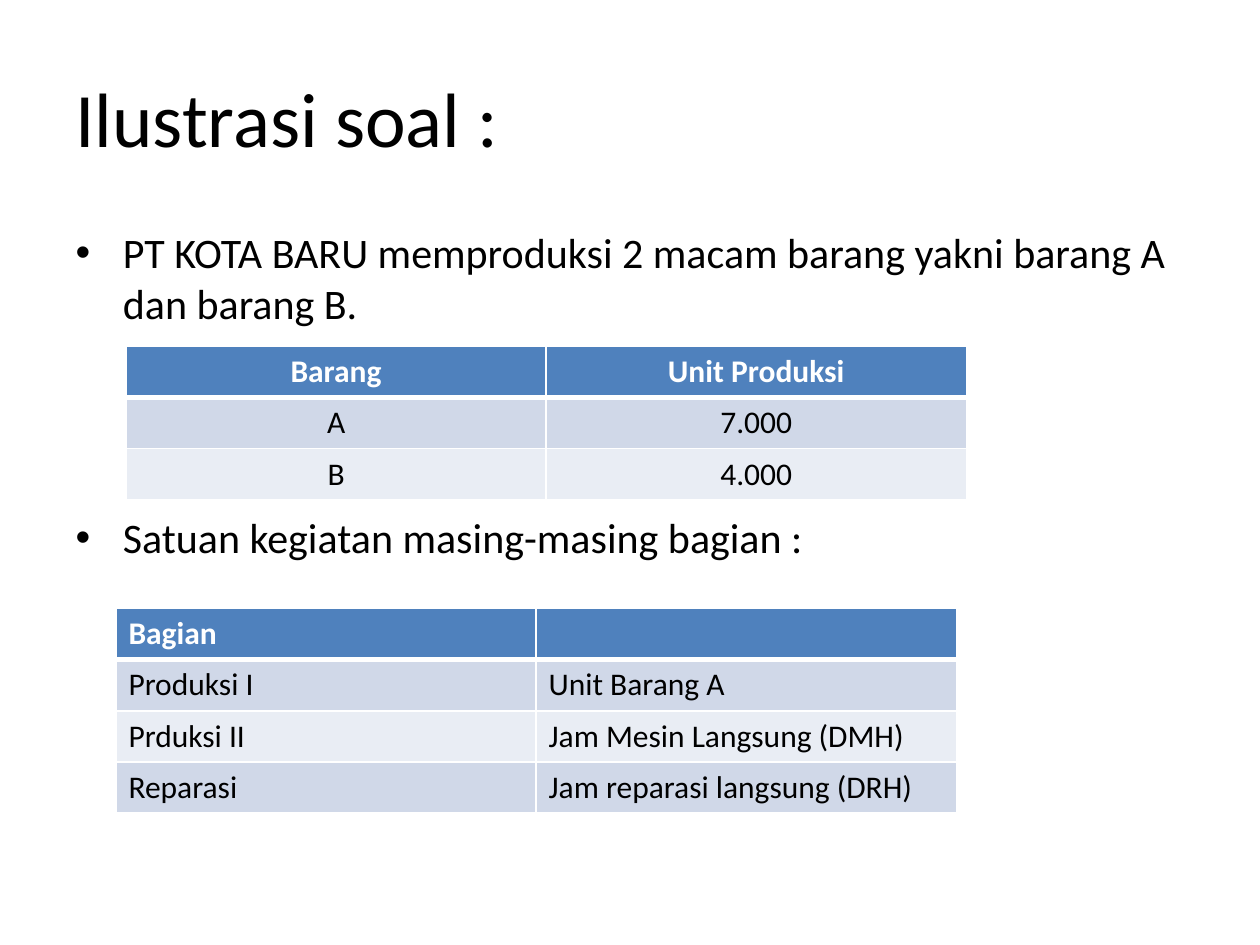
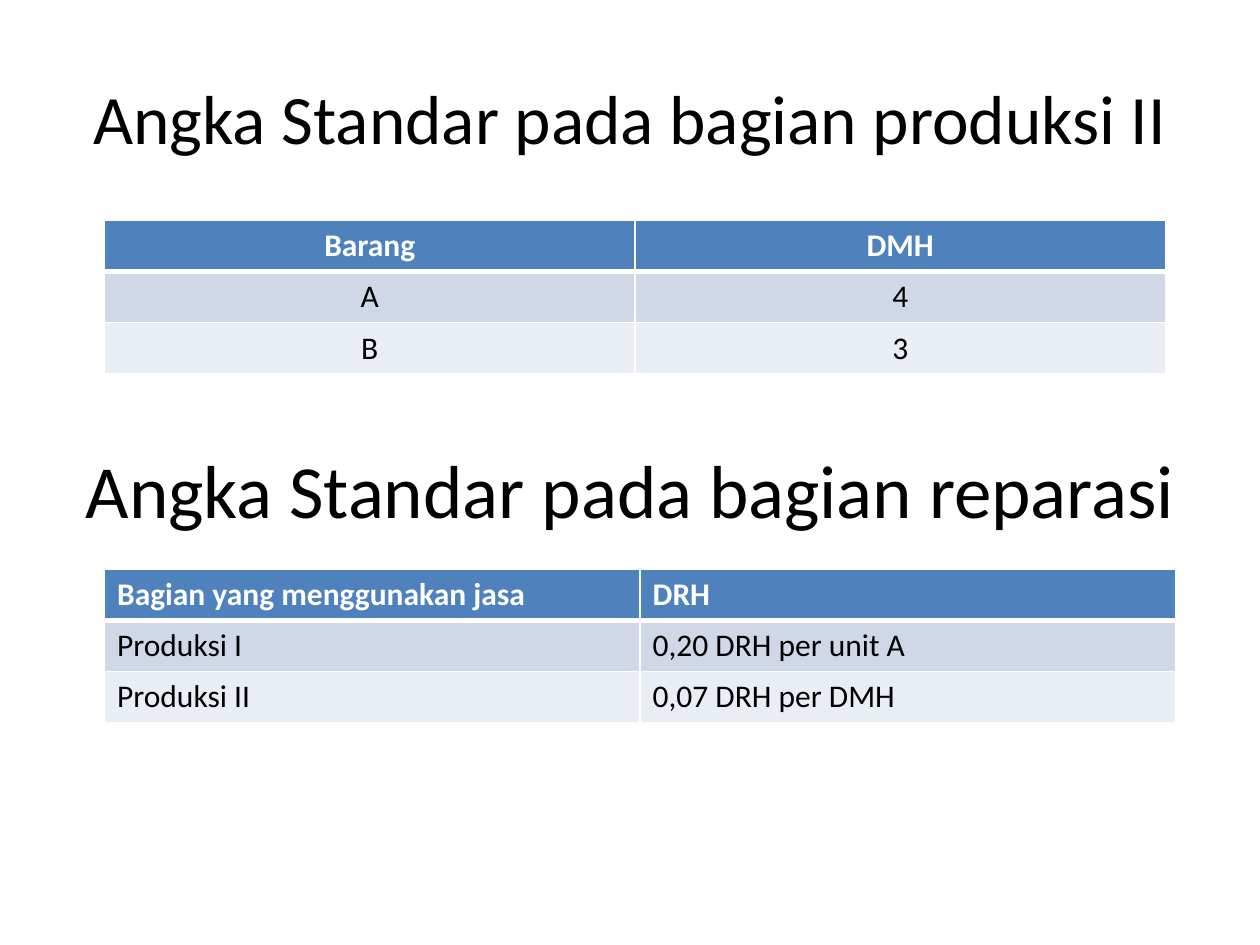
from pptx import Presentation
from pptx.dml.color import RGBColor
from pptx.enum.text import MSO_ANCHOR, MSO_AUTO_SIZE, PP_ALIGN
from pptx.util import Inches, Pt
from lxml.etree import SubElement
from pptx.oxml.ns import qn

FONT = "Calibri"
COLOURS = {"text": "000000", "white": "FFFFFF", "head": "4F81BD",
           "odd": "D0D8E8", "even": "E9EDF4"}
ROW = 0.405


def write(frame, text, size, align=PP_ALIGN.LEFT, colour="text", bold=False):
    """Add one run to the last paragraph of a text frame."""
    par = frame.paragraphs[-1]
    par.alignment = align
    run = par.add_run()
    run.text = text
    run.font.name = FONT
    run.font.size = Pt(size)
    run.font.bold = bold
    run.font.color.rgb = RGBColor.from_string(COLOURS[colour])


def draw_table(slide, left, top, width, rows, align):
    """Draw a banded table with a header row and white rules."""
    frame = slide.shapes.add_table(len(rows), len(rows[0]), Inches(left), Inches(top),
                                   Inches(width), Inches(ROW * len(rows)))
    for i, row in enumerate(rows):
        fill = "head" if i == 0 else "odd" if i % 2 else "even"
        for j, text in enumerate(row):
            cell = frame.table.cell(i, j)
            props = cell._tc.get_or_add_tcPr()
            for side in ("lnL", "lnR", "lnT", "lnB"):
                thick = (i, side) in ((0, "lnB"), (1, "lnT"))
                line = SubElement(props, qn(f"a:{side}"), w=str(Pt(3 if thick else 1)))
                SubElement(SubElement(line, qn("a:solidFill")), qn("a:srgbClr"),
                           val=COLOURS["white"])
            cell.fill.solid()
            cell.fill.fore_color.rgb = RGBColor.from_string(COLOURS[fill])
            if text:
                write(cell.text_frame, text, 18, align,
                      "white" if i == 0 else "text", i == 0)


deck = Presentation()
deck.slide_width, deck.slide_height = Inches(10), Inches(7.5)

# Both slides share the title's place
slides = []
for layout, text, size, align in (
        (1, "Ilustrasi soal :", 44, PP_ALIGN.LEFT),
        (5, "Angka Standar pada bagian produksi II", 39.6, PP_ALIGN.CENTER)):
    slide = deck.slides.add_slide(deck.slide_layouts[layout])
    title = slide.shapes.title
    title.left, title.top = Inches(0.5), Inches(0.3)
    title.width, title.height = Inches(9), Inches(1.25)
    title.text_frame.auto_size = MSO_AUTO_SIZE.NONE
    write(title.text_frame, text, size, align)
    slides.append(slide)
goods, rates = slides

# Slide 1: products and units of activity
body = goods.placeholders[1]
body.left, body.top = Inches(0.5), Inches(1.75)
body.width, body.height = Inches(9), Inches(4.95)
frame = body.text_frame
frame.auto_size = MSO_AUTO_SIZE.NONE
write(frame, "PT KOTA BARU memproduksi 2 macam barang yakni barang A dan barang B.", 24)
frame.add_paragraph().space_before = Pt(105)
write(frame, "Satuan kegiatan masing-masing bagian :", 24)

draw_table(goods, 1, 2.75, 6.67,
           [("Barang", "Unit Produksi"), ("A", "7.000"), ("B", "4.000")],
           PP_ALIGN.CENTER)
draw_table(goods, 0.92, 4.83, 6.67,
           [("Bagian", ""),
            ("Produksi I", "Unit Barang A"),
            ("Prduksi II", "Jam Mesin Langsung (DMH)"),
            ("Reparasi", "Jam reparasi langsung (DRH)")],
           PP_ALIGN.LEFT)

# Slide 2: standard rates
draw_table(rates, 0.83, 1.75, 8.42,
           [("Barang", "DMH"), ("A", "4"), ("B", "3")], PP_ALIGN.CENTER)

box = rates.shapes.add_textbox(Inches(0.5), Inches(3.25), Inches(9), Inches(1.25))
box.text_frame.word_wrap = True
box.text_frame.vertical_anchor = MSO_ANCHOR.MIDDLE
write(box.text_frame, "Angka Standar pada bagian reparasi", 42.9, PP_ALIGN.CENTER)

draw_table(rates, 0.83, 4.52, 8.5,
           [("Bagian yang menggunakan jasa", "DRH"),
            ("Produksi I", "0,20 DRH per unit A"),
            ("Produksi II", "0,07 DRH per DMH")],
           PP_ALIGN.LEFT)

deck.save("out.pptx")
